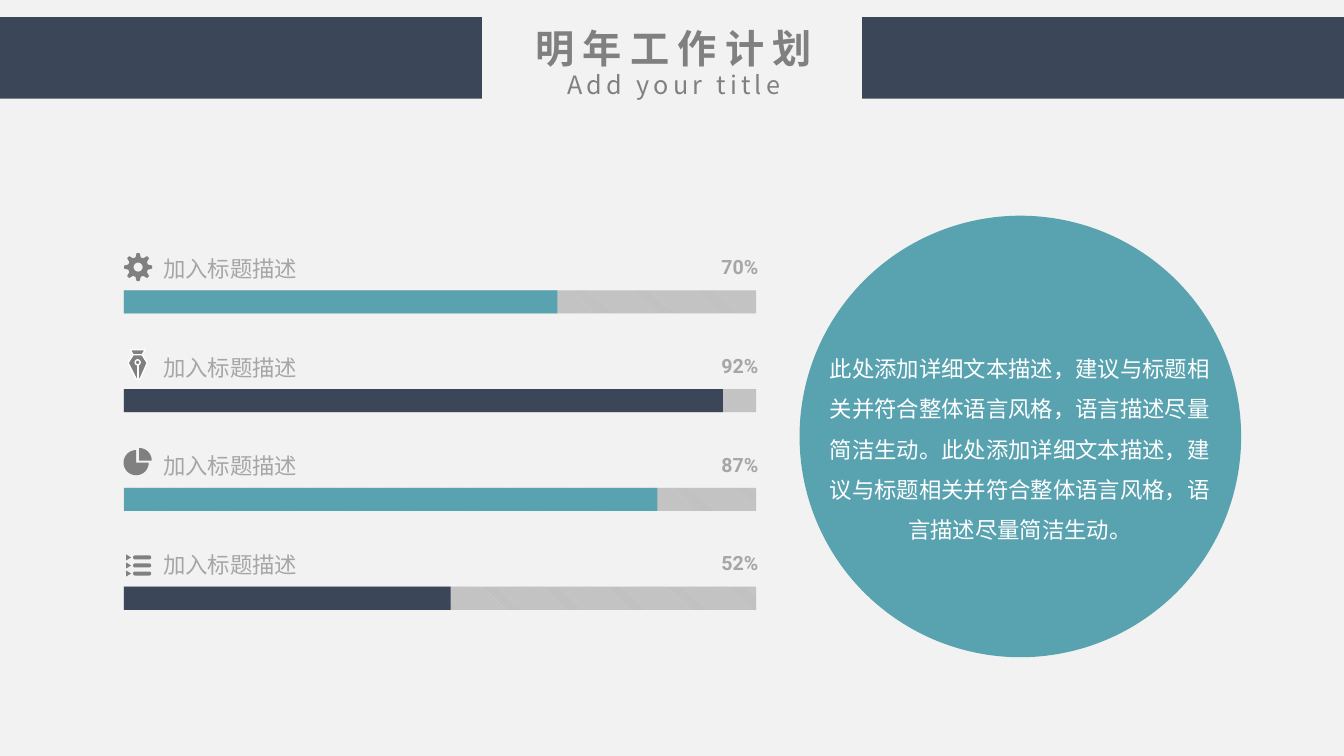
import math

import pptx
import pptx.dml.color
import pptx.enum.dml
import pptx.enum.shapes
import pptx.enum.text
import pptx.oxml.ns
import pptx.util
from lxml import etree

NAVY, TEAL, GREY, PALE, WHITE = "3B4658", "59A3B0", "808080", "A6A6A6", "FFFFFF"
SLIDE_W, SLIDE_H = 13.33, 7.5
HAN, LATIN = "Noto Sans CJK SC", "Roboto"
TITLE, SUBTITLE = "明年工作计划", "Add your title"
SENTENCE = "此处添加详细文本描述，建议与标题相关并符合整体语言风格，语言描述尽量简洁生动。"
LABEL = "加入标题描述"
PLANS = [("70%", 4.3, TEAL), ("92%", 5.94, NAVY), ("87%", 5.29, TEAL), ("52%", 3.24, NAVY)]
BANNER_W, BANNER_TOP, BANNER_H = 4.78, 0.17, 0.81
BAR_LEFT, BAR_TOP, BAR_W, BAR_H, ROW_STEP = 1.23, 2.88, 6.27, 0.23, 0.98
TEXT_RISE = 0.4
NIB_CAP = [(1.41, 3.52), (1.32, 3.52), (1.29, 3.47), (1.44, 3.47)]
NIB_BODY = [(1.39, 3.76), (1.35, 3.76), (1.27, 3.6), (1.32, 3.52), (1.41, 3.52), (1.46, 3.6)]
LIST_ROWS = [5.53, 5.61, 5.69]
SHAPES = pptx.enum.shapes.MSO_SHAPE
ALIGN = pptx.enum.text.PP_ALIGN


def rgb(value):
    """Return the colour for a hex string."""
    return pptx.dml.color.RGBColor.from_string(value)


def inches(*values):
    """Return lengths in inches as EMU."""
    return [pptx.util.Inches(value) for value in values]


def paint(shape, fill, line=None):
    """Give a shape its flat fill and optional outline."""
    shape.shadow.inherit = False
    shape.fill.solid()
    shape.fill.fore_color.rgb = rgb(fill)
    if line:
        shape.line.color.rgb = rgb(line)
        shape.line.width = pptx.util.Pt(1)
    else:
        shape.line.fill.background()
    return shape


def add_block(page, kind, at, fill, line=None):
    """Add a preset shape."""
    return paint(page.shapes.add_shape(kind, *inches(*at)), fill, line)


def add_outline(page, contours, fill=GREY, line=None):
    """Add one freeform made of closed contours."""
    paths = [[inches(*point) for point in contour] for contour in contours]
    builder = page.shapes.build_freeform(*paths[0][0], scale=1.0)
    for index, path in enumerate(paths):
        if index:
            builder.move_to(*path[0])
        builder.add_line_segments(path[1:], close=True)
    return paint(builder.convert_to_shape(), fill, line)


def add_text(page, text, at, size, color, font=HAN, bold=False, align=ALIGN.LEFT,
             spacing=0, leading=None, wrap=True):
    """Add a text box with one formatted paragraph."""
    box = page.shapes.add_textbox(*inches(*at))
    box.text_frame.word_wrap = wrap
    box.text_frame.auto_size = pptx.enum.text.MSO_AUTO_SIZE.SHAPE_TO_FIT_TEXT
    para = box.text_frame.paragraphs[0]
    para.alignment = align
    if leading:
        para.line_spacing = leading
    span = para.add_run()
    span.text = text
    span.font.size = pptx.util.Pt(size)
    span.font.bold = bold
    span.font.color.rgb = rgb(color)
    span.font.name = font
    properties = span._r.get_or_add_rPr()
    etree.SubElement(properties, pptx.oxml.ns.qn("a:ea"), typeface=font)
    if spacing:
        properties.set("spc", str(spacing * 100))


def arc(x, y, radius, start, end, steps=24):
    """Return points along an arc, in clockwise degrees from the right."""
    angles = [math.radians(start + (end - start) * i / steps) for i in range(steps + 1)]
    return [(x + radius * math.cos(a), y + radius * math.sin(a)) for a in angles]


def add_gear(page, x, y):
    """Draw an eight-toothed gear with a round hole."""
    profile = [(-15, 0.1), (-6, 0.14), (6, 0.14), (15, 0.1)]
    teeth = [arc(x, y, radius, 45 * tooth + turn, 0, 1)[0]
             for tooth in range(8) for turn, radius in profile]
    add_outline(page, [teeth, arc(x, y, 0.045, 360, 0)])


def add_nib(page):
    """Draw a pen nib."""
    add_outline(page, [NIB_CAP], line=WHITE)
    add_outline(page, [NIB_BODY], line=WHITE)
    slit = page.shapes.add_connector(pptx.enum.shapes.MSO_CONNECTOR.STRAIGHT,
                                     *inches(1.37, 3.62, 1.37, 3.76))
    slit.line.color.rgb = rgb(WHITE)
    slit.line.width = pptx.util.Pt(1)
    etree.SubElement(slit._element.spPr, pptx.oxml.ns.qn("a:effectLst"))
    add_block(page, SHAPES.OVAL, (1.34, 3.57, 0.05, 0.05), GREY, WHITE)


def add_pie(page):
    """Draw a pie with one quarter pulled out."""
    for x, y, start, end in [(1.35, 4.59, 0, 270), (1.38, 4.57, 270, 360)]:
        add_outline(page, [[(x, y)] + arc(x, y, 0.125, start, end)])


def add_list(page):
    """Draw a list of three pointers and rounded strokes."""
    contours = []
    for y in LIST_ROWS:
        contours.append([(1.25, y - 0.03), (1.3, y), (1.25, y + 0.03)])
        contours.append(arc(1.34, y, 0.02, 90, 270, 8) + arc(1.48, y, 0.02, -90, 90, 8))
    add_outline(page, contours)


def add_plan(page, row, percent, done, color):
    """Draw one progress bar with its label and percentage."""
    top = BAR_TOP + row * ROW_STEP
    track = add_block(page, SHAPES.RECTANGLE, (BAR_LEFT, top, BAR_W, BAR_H), PALE)
    track.fill.patterned()
    track.fill.pattern = pptx.enum.dml.MSO_PATTERN.DARK_DOWNWARD_DIAGONAL
    track.fill.fore_color.rgb = rgb("D9D9D9")
    track.fill.back_color.rgb = rgb("BFBFBF")
    add_block(page, SHAPES.RECTANGLE, (BAR_LEFT, top, done, BAR_H), color)
    add_text(page, LABEL, (1.52, top - TEXT_RISE, 1.55, 0.37), 16, PALE, wrap=False)
    add_text(page, percent, (7.03, top - TEXT_RISE, 0.59, 0.34), 14, PALE, font=LATIN,
             bold=True, align=ALIGN.RIGHT, wrap=False)


def main():
    """Build the plan slide."""
    deck = pptx.Presentation()
    deck.slide_width, deck.slide_height = inches(SLIDE_W, SLIDE_H)
    page = deck.slides.add_slide(deck.slide_layouts[6])
    page.background.fill.solid()
    page.background.fill.fore_color.rgb = rgb("F2F2F2")
    for left in (0, SLIDE_W - BANNER_W):
        add_block(page, SHAPES.RECTANGLE, (left, BANNER_TOP, BANNER_W, BANNER_H), NAVY)
    add_text(page, TITLE, (5.14, 0.19, 3.08, 0.57), 28, GREY, bold=True,
             align=ALIGN.CENTER, spacing=6)
    add_text(page, SUBTITLE, (5.35, 0.64, 2.67, 0.4), 18, GREY,
             align=ALIGN.CENTER, spacing=3)
    add_block(page, SHAPES.OVAL, (7.93, 2.14, 4.38, 4.38), TEAL)
    for row, plan in enumerate(PLANS):
        add_plan(page, row, *plan)
    add_gear(page, 1.37, 2.65)
    add_nib(page)
    add_pie(page)
    add_list(page)
    add_text(page, SENTENCE * 2, (8.09, 3.34, 4.05, 2.52), 16, WHITE,
             align=ALIGN.CENTER, leading=1.5)
    deck.save("out.pptx")


if __name__ == "__main__":
    main()
